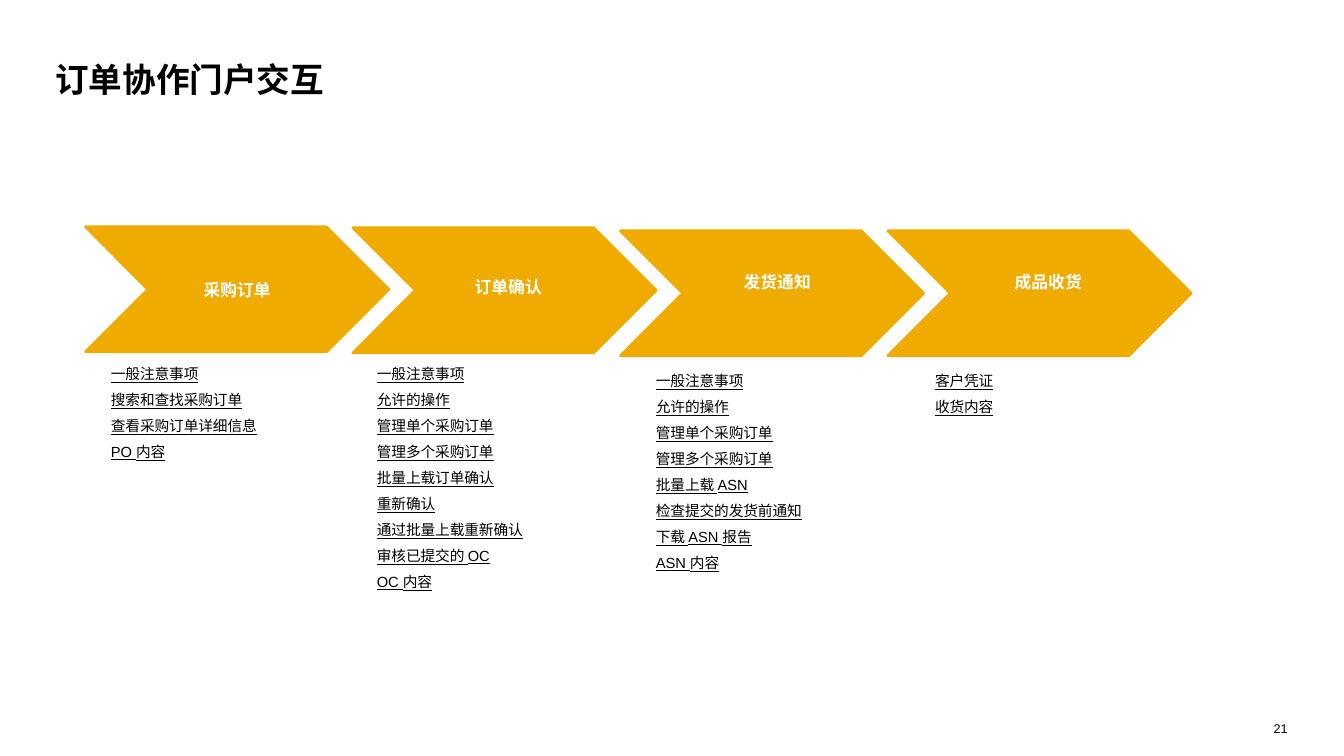
from pptx import Presentation
from pptx.dml.color import RGBColor
from pptx.enum.shapes import MSO_SHAPE
from pptx.enum.text import MSO_ANCHOR, MSO_AUTO_SIZE, PP_ALIGN
from pptx.util import Inches, Pt

GOLD = RGBColor(0xF0, 0xAB, 0x00)
BLACK = RGBColor(0x00, 0x00, 0x00)
WHITE = RGBColor(0xFF, 0xFF, 0xFF)
FONT = "Arial"


class Page:
    """One slide; boxes are (left, top, width, height) in percent of its size."""

    def __init__(self, deck):
        self.deck = deck
        self.slide = deck.slides.add_slide(deck.slide_layouts[5])

    def place(self, box):
        wide, high = self.deck.slide_width, self.deck.slide_height
        return [round(part * size / 100)
                for part, size in zip(box, (wide, high, wide, high))]

    def fill_text(self, shape, text, size, color=BLACK, align=PP_ALIGN.LEFT,
                  bold=False, under=False, before=0):
        frame = shape.text_frame
        frame.text = text
        frame.margin_left = frame.margin_right = 0
        frame.margin_top = frame.margin_bottom = 0
        for line in frame.paragraphs:
            line.alignment = align
            line.space_before = Pt(before)
            for run in line.runs:
                font = run.font
                font.name, font.size = FONT, Pt(size)
                font.bold, font.underline = bold, under
                font.color.rgb = color
        return frame

    def title(self, box, text):
        shape = self.slide.shapes.title
        shape.left, shape.top, shape.width, shape.height = self.place(box)
        frame = self.fill_text(shape, text, 24, bold=True)
        frame.vertical_anchor = MSO_ANCHOR.TOP
        frame.auto_size = MSO_AUTO_SIZE.SHAPE_TO_FIT_TEXT

    def text(self, box, text, size, wrap=True, **style):
        shape = self.slide.shapes.add_textbox(*self.place(box))
        frame = self.fill_text(shape, text, size, **style)
        frame.word_wrap = wrap
        frame.auto_size = MSO_AUTO_SIZE.SHAPE_TO_FIT_TEXT

    def label(self, box, text):
        self.text(box, text, 12, color=WHITE, align=PP_ALIGN.CENTER, bold=True)

    def topics(self, box, lines):
        self.text(box, "\n".join(lines), 10.5, under=True, before=6)

    def arrow(self, box, text=""):
        shape = self.slide.shapes.add_shape(MSO_SHAPE.CHEVRON, *self.place(box))
        shape.shadow.inherit = False
        shape.fill.solid()
        shape.fill.fore_color.rgb = GOLD
        shape.line.color.rgb = GOLD
        shape.line.width = Pt(2)
        if text:
            frame = self.fill_text(shape, text, 12, WHITE, PP_ALIGN.CENTER,
                                   bold=True)
            frame.vertical_anchor = MSO_ANCHOR.MIDDLE


# Step name, arrow top, label box (None: inside the arrow), list corner, topics
STEPS = [
    ("采购订单", 30, None, (8.25, 48.27),
     ["一般注意事项", "搜索和查找采购订单", "查看采购订单详细信息", "PO 内容"]),
    ("订单确认", 30.13, (31.56, 36.67, 12.52, 8.8), (28.04, 48.27),
     ["一般注意事项", "允许的操作", "管理单个采购订单", "管理多个采购订单",
      "批量上载订单确认", "重新确认", "通过批量上载重新确认",
      "审核已提交的 OC", "OC 内容"]),
    ("发货通知", 30.53, (51.8, 36, 12.07, 9.47), (48.8, 49.2),
     ["一般注意事项", "允许的操作", "管理单个采购订单", "管理多个采购订单",
      "批量上载 ASN", "检查提交的发货前通知", "下载 ASN 报告", "ASN 内容"]),
    ("成品收货", 30.53, (71.74, 36, 12.52, 5.33), (69.57, 49.2),
     ["客户凭证", "收货内容"]),
]
START, PITCH = 6.37, 19.9
WIDE, HIGH = 22.56, 16.53
LIST_WIDE, ROW = 18.89, 3.47


def main():
    deck = Presentation()
    deck.slide_width, deck.slide_height = Inches(13.34), Inches(7.5)
    page = Page(deck)
    page.title((4.12, 7.73, 91.68, 5.33), "订单协作门户交互")
    for i, (name, top, spot, corner, lines) in enumerate(STEPS):
        page.arrow((START + i * PITCH, top, WIDE, HIGH), "" if spot else name)
        if spot:
            page.label(spot, name)
        page.topics((*corner, LIST_WIDE, ROW * len(lines)), lines)
    page.text((94.68, 95.33, 1.12, 2), "21", 9, wrap=False, align=PP_ALIGN.RIGHT)
    deck.save("out.pptx")


if __name__ == "__main__":
    main()
